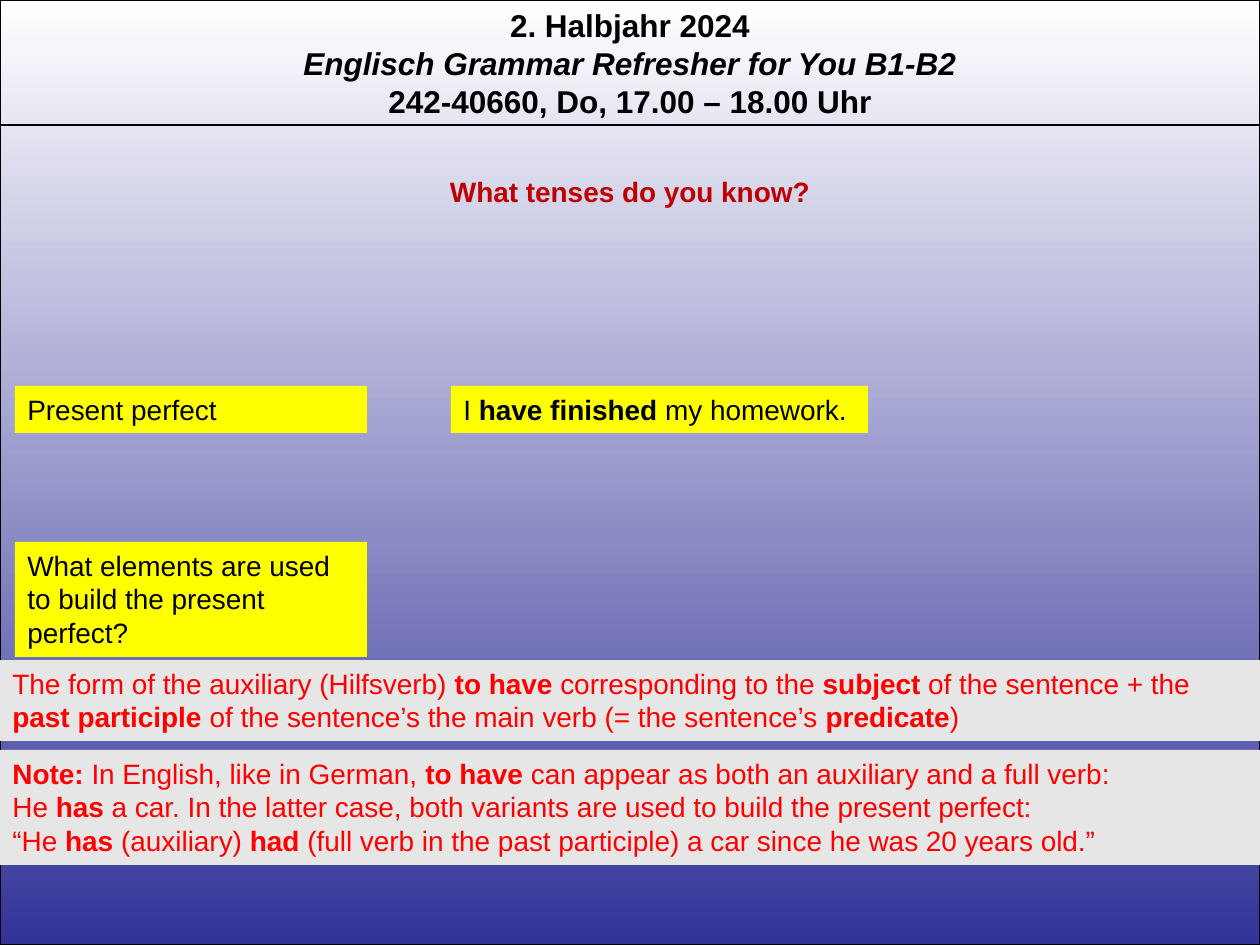
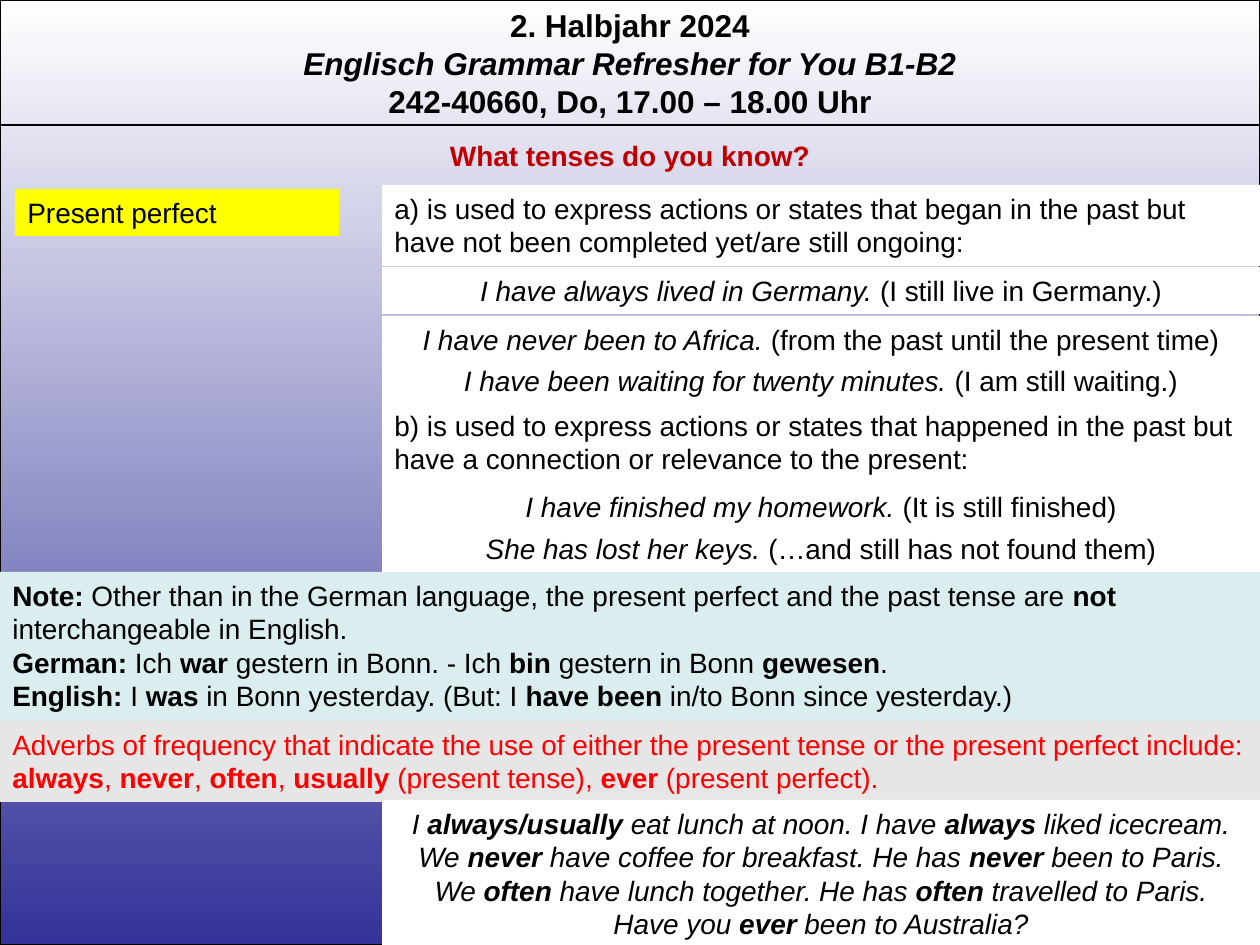
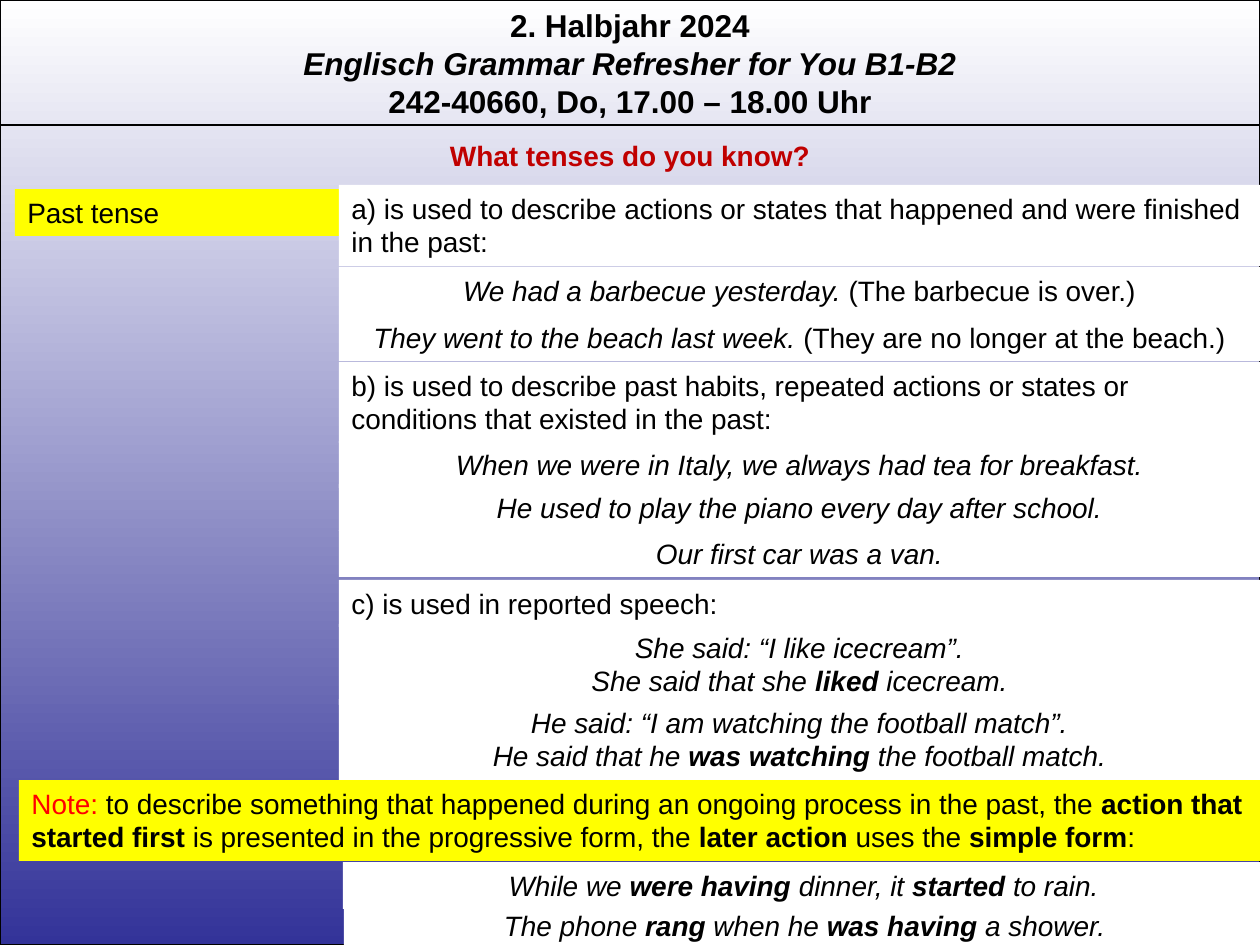
import pptx
import pptx.util
import pptx.dml.color
import pptx.enum.shapes
import pptx.enum.text
import lxml.etree

PX = 914400 / 126
WIDTH, HEIGHT = 1260, 945
BLACK, WHITE, RED, DARK_RED, BLUE = "000000", "FFFFFF", "FF0000", "C00000", "333399"
YELLOW, GREY, TEAL = "FFFF00", "E6E6E6", "DAEDEF"
TEXT_COLORS = {YELLOW: BLACK, WHITE: BLACK, TEAL: BLACK, GREY: RED}
COURSE = ["*2. Halbjahr 2024*", "_*Englisch Grammar Refresher for You B1-B2*_", "*242-40660, Do, 17.00 – 18.00 Uhr*"]
QUESTION = ["*What tenses do you know?*"]


def rgb(value):
    return pptx.dml.color.RGBColor.from_string(value)


def add_box(s, left, top, width, rows, fill, lines, color=None, size=16):
    height = 34 * rows + 13 if size == 16 else 127
    at = [round(v * PX) for v in (left, top, width, height)]
    if fill:
        sp = s.shapes.add_shape(pptx.enum.shapes.MSO_SHAPE.RECTANGLE, *at)
        sp.shadow.inherit = False
        sp.fill.solid()
        sp.fill.fore_color.rgb = rgb(fill)
        sp.line.fill.background()
    else:
        sp = s.shapes.add_textbox(*at)
    tf = sp.text_frame
    tf.word_wrap = True
    tf.auto_size = pptx.enum.text.MSO_AUTO_SIZE.SHAPE_TO_FIT_TEXT
    tf.vertical_anchor = pptx.enum.text.MSO_ANCHOR.TOP
    for n, line in enumerate(lines):
        p = tf.paragraphs[0] if n == 0 else tf.add_paragraph()
        centred = not fill or line.startswith("_")
        p.alignment = pptx.enum.text.PP_ALIGN.CENTER if centred else pptx.enum.text.PP_ALIGN.LEFT
        p.font.name = "Arial"
        p.font.size = pptx.util.Pt(size)
        p.font.color.rgb = rgb(color or TEXT_COLORS[fill])
        pieces = [(text, i % 2 == 1, b % 2 == 1)
                  for i, part in enumerate(line.split("_"))
                  for b, text in enumerate(part.split("*")) if text]
        italics = {italic for _, italic, _ in pieces}
        bolds = {bold for _, _, bold in pieces}
        if len(italics) == 1:
            p.font.italic = pieces[0][1]
        if len(bolds) == 1:
            p.font.bold = pieces[0][2]
        for text, italic, bold in pieces:
            r = p.add_run()
            r.text = text
            if len(italics) > 1:
                r.font.italic = italic
            if len(bolds) > 1:
                r.font.bold = bold
    return sp


slides = [
    (168, [
        (15, 386, 352, 1, YELLOW, ["Present perfect"]),
        (451, 386, 417, 1, YELLOW, ["I *have finished *my homework."]),
        (15, 542, 352, 3, YELLOW, ["What elements are used to build the present perfect?"]),
        (0, 660, 1265, 2, GREY, [
            "The form of the auxiliary (Hilfsverb) *to have *corresponding to the *subject* of the sentence + the "
            "*past participle *of the sentence’s the main verb (= the sentence’s *predicate*)"]),
        (0, 750, 1265, 3, GREY, [
            "*Note: *In English, like in German, *to have *can appear as both an auxiliary and a full verb:",
            "He *has* a car. In the latter case, both variants are used to build the present perfect:",
            "“He *has *(auxiliary) *had *(full verb in the past participle) a car since he was 20 years old.”"]),
    ]),
    (132, [
        (15, 189, 324, 1, YELLOW, ["Present perfect"]),
        (382, 185, 878, 2, WHITE, [
            "a) is used to express actions or states that began in the past but "
            "have not been completed yet/are still ongoing:"]),
        (0, 572, 1260, 4, TEAL, [
            "*Note: *Other than in the German language, the present perfect and the past tense are *not* "
            "interchangeable in English.",
            "*German: *Ich *war *gestern in Bonn. - Ich *bin *gestern in Bonn *gewesen*.",
            "*English: *I *was* in Bonn yesterday. (But: I *have been* in/to Bonn since yesterday.)"]),
        (0, 721, 1265, 2, GREY, [
            "Adverbs of frequency that indicate the use of either the present tense or the present perfect include:",
            "*always*, *never*, *often*, *usually* (present tense), *ever* (present perfect)."]),
        (382, 267, 878, 1, WHITE, ["_I have always lived in Germany. _(I still live in Germany.)"]),
        (382, 357, 878, 1, WHITE, ["_I have been waiting for twenty minutes. _(I am still waiting.)"]),
        (382, 402, 878, 2, WHITE, [
            "b) is used to express actions or states that happened in the past but "
            "have a connection or relevance to the present:"]),
        (382, 483, 878, 1, WHITE, ["_I have finished my homework. _(It is still finished)"]),
        (382, 525, 878, 1, WHITE, ["_She has lost her keys. _(…and still has not found them)"]),
        (382, 316, 878, 1, WHITE, ["_I have never been to Africa. _(from the past until the present time)"]),
        (382, 800, 878, 4, WHITE, [
            "_I *always/usually *eat lunch at noon. I have *always *liked icecream._",
            "_We *never *have coffee for breakfast. He has *never *been to Paris._",
            "_We *often *have lunch together. He has *often *travelled to Paris._",
            "_Have you *ever *been to Australia?_"]),
    ]),
    (132, [
        (15, 189, 324, 1, YELLOW, ["Past tense"]),
        (339, 185, 921, 2, WHITE, [
            "a) is used to describe actions or states that happened and were finished in the past:"]),
        (339, 267, 921, 1, WHITE, ["_We had a barbecue yesterday. _(The barbecue is over.)"]),
        (339, 362, 921, 2, WHITE, [
            "b) is used to describe past habits, repeated actions or states or "
            "conditions that existed in the past:"]),
        (339, 441, 921, 1, WHITE, ["_When we were in Italy, we always had tea for breakfast._"]),
        (339, 484, 921, 1, WHITE, ["_He used to play the piano every day after school._"]),
        (339, 314, 921, 1, WHITE, ["_They went to the beach last week. _(They are no longer at the beach.)"]),
        (339, 530, 921, 1, WHITE, ["_Our first car was a van._"]),
        (339, 580, 921, 1, WHITE, ["c) is used in reported speech:"]),
        (339, 624, 921, 2, WHITE, [
            "_She said: “I like icecream”._", "_She said that she *liked *icecream._"]),
        (339, 699, 921, 2, WHITE, [
            "_He said: “I am watching the football match”._",
            "_He said that he *was watching *the football match._"]),
        (19, 780, 1241, 2, YELLOW, [
            "Note: ** to describe something that happened during an ongoing process in the past, the "
            "*action that started first *is presented in the progressive form, the "
            "*later action *uses the *simple form*:".replace("** ", "**")]),
        (343, 862, 921, 1, WHITE, ["_While we *were having *dinner, it *started *to rain._"]),
        (344, 902, 921, 1, WHITE, ["_The phone *rang *when he *was having *a shower._"]),
    ]),
]

prs = pptx.Presentation()
prs.slide_width = round(WIDTH * PX)
prs.slide_height = round(HEIGHT * PX)

for question_top, boxes in slides:
    s = prs.slides.add_slide(prs.slide_layouts[6])
    backdrop = s.shapes.add_shape(pptx.enum.shapes.MSO_SHAPE.RECTANGLE, 0, 0, prs.slide_width, prs.slide_height)
    backdrop.shadow.inherit = False
    backdrop.fill.gradient()
    backdrop.fill.gradient_angle = 270
    for stop, color, position in zip(backdrop.fill.gradient_stops, (WHITE, BLUE), (0, 1)):
        stop.color.rgb = rgb(color)
        stop.position = position
    add_box(s, 0, 0, WIDTH, 3, None, COURSE, BLACK, 18)
    rule = s.shapes.add_connector(
        pptx.enum.shapes.MSO_CONNECTOR.STRAIGHT, 0, round(125 * PX), prs.slide_width, round(125 * PX))
    lxml.etree.SubElement(rule._element.spPr, pptx.oxml.ns.qn("a:effectLst"))
    for sp in (backdrop, rule):
        sp.line.color.rgb = rgb(BLACK)
        sp.line.width = pptx.util.Pt(0.75)
    add_box(s, 0, question_top, WIDTH, 1, None, QUESTION, DARK_RED)
    for box in boxes:
        sp = add_box(s, *box)
        if box[4] == YELLOW and box[5][0].startswith("Note: "):
            sp.text_frame.paragraphs[0].runs[0].font.color.rgb = rgb(RED)

prs.save("out.pptx")
